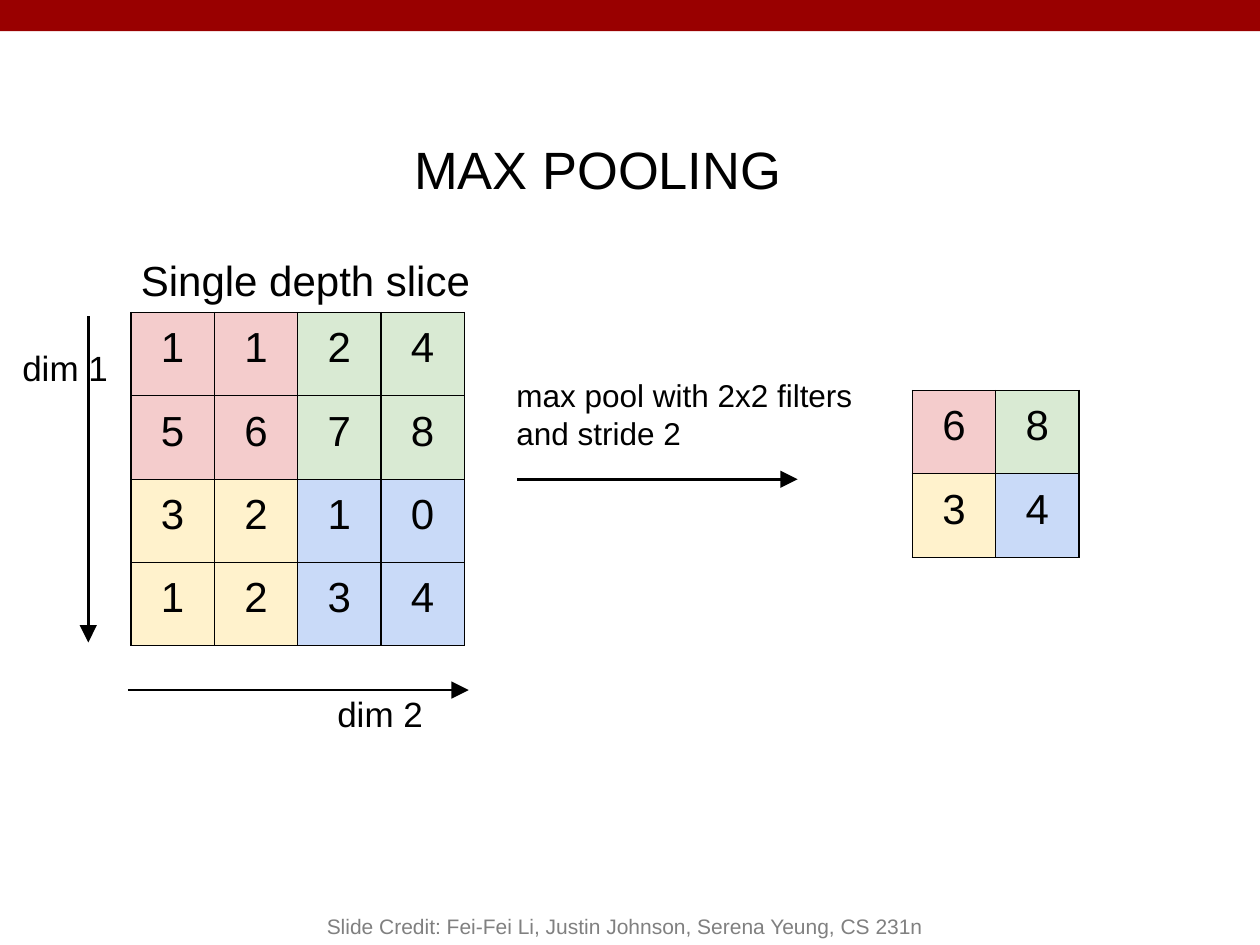
from lxml import etree
from pptx import Presentation
from pptx import util as u
from pptx.dml.color import RGBColor
from pptx.enum import shapes, text
from pptx.oxml import ns

COLOURS = {
    "banner": "990000", "ink": "000000", "credit": "808080",
    "red": "F4CCCC", "green": "D9EAD3", "yellow": "FFF2CC", "blue": "C9DAF8",
}
QUADRANTS = [["red", "green"], ["yellow", "blue"]]

# Lengths are centimetres, text sizes are points.
CELL = 1.68
GRIDS = [
    {"at": (2.64, 6.3), "values": [[1, 1, 2, 4], [5, 6, 7, 8], [3, 2, 1, 0], [1, 2, 3, 4]]},
    {"at": (18.39, 7.87), "values": [[6, 8], [3, 4]]},
]
ARROWS = [  # start, end
    ((1.78, 6.38), (1.78, 12.95)),
    ((2.58, 13.91), (9.45, 13.91)),
    ((10.43, 9.66), (16.08, 9.66)),
]
LABELS = [  # wording, (left, top, width, height), size
    ("Single depth slice", (2.59, 4.88, 7.26, 1.57), 24),
    ("dim 1", (0.2, 6.73, 2.57, 1.3), 20),
    ("dim 2", (6.55, 13.72, 2.51, 1.02), 20),
    ("max pool with 2x2 filters and stride 2", (10.16, 7.34, 7.44, 2.03), 18),
    ("MAX POOLING", (8.1, 2.51, 11.86, 1.83), 30),
]
CREDIT = ("Slide Credit: Fei-Fei Li, Justin Johnson, Serena Yeung, CS 231n",
          (5.08, 17.78, 15.04, 1.27), 12)

MARGINS = {f"margin_{side}": u.Cm(0.25) for side in ("left", "right", "top", "bottom")}
CREDIT_FRAME = {"margin_top": u.Cm(0.13), "margin_bottom": u.Cm(0.13),
                "vertical_anchor": text.MSO_ANCHOR.BOTTOM}


def colour(name):
    return RGBColor.from_string(COLOURS[name])


def apply(target, values):
    for name, value in values.items():
        setattr(target, name, value)


def write(frame, wording, size, ink="ink", align=text.PP_ALIGN.LEFT):
    para = frame.paragraphs[0]
    para.alignment = align
    span = para.add_run()
    span.text = wording
    apply(span.font, {"name": "Arial", "size": u.Pt(size)})
    span.font.color.rgb = colour(ink)


def add_label(page, wording, place, size, frame_format=None, **style):
    frame = page.shapes.add_textbox(*map(u.Cm, place)).text_frame
    apply(frame, {"word_wrap": True, **MARGINS, **(frame_format or {})})
    write(frame, wording, size, **style)


def add_borders(cell):
    """Give a cell thin borders; they must precede its fill in the XML."""
    properties = cell._tc.get_or_add_tcPr()
    for edge in ("a:lnL", "a:lnR", "a:lnT", "a:lnB"):
        line = etree.SubElement(properties, ns.qn(edge), w=str(u.Pt(0.75)))
        fill = etree.SubElement(line, ns.qn("a:solidFill"))
        etree.SubElement(fill, ns.qn("a:srgbClr"), val=COLOURS["ink"])


def add_grid(page, at, values):
    count = len(values)
    side = u.Cm(CELL * count)
    table = page.shapes.add_table(count, count, *map(u.Cm, at), side, side).table
    apply(table, {"first_row": False, "horz_banding": False})
    for i, numbers in enumerate(values):
        table.rows[i].height = table.columns[i].width = u.Cm(CELL)
        for j, number in enumerate(numbers):
            cell = table.cell(i, j)
            add_borders(cell)
            apply(cell, MARGINS)
            cell.fill.solid()
            cell.fill.fore_color.rgb = colour(QUADRANTS[2 * i // count][2 * j // count])
            write(cell.text_frame, str(number), 24, align=text.PP_ALIGN.CENTER)


def add_arrow(page, start, end):
    arrow = page.shapes.add_connector(
        shapes.MSO_CONNECTOR.STRAIGHT, *map(u.Cm, start + end))
    arrow.line.width = u.Pt(1.5)
    arrow.line.color.rgb = colour("ink")
    etree.SubElement(arrow.line._get_or_add_ln(), ns.qn("a:tailEnd"),
                     type="triangle", w="lg", len="lg")
    etree.SubElement(arrow._element.spPr, ns.qn("a:effectLst"))


def main():
    deck = Presentation()
    apply(deck, {"slide_width": u.Cm(25.4), "slide_height": u.Cm(19.05)})
    page = deck.slides.add_slide(deck.slide_layouts[6])

    banner = page.shapes.add_shape(
        shapes.MSO_SHAPE.RECTANGLE, 0, 0, deck.slide_width, u.Cm(0.63))
    banner.shadow.inherit = False
    banner.fill.solid()
    banner.fill.fore_color.rgb = colour("banner")
    banner.line.fill.background()

    for grid in GRIDS:
        add_grid(page, **grid)
    for start, end in ARROWS:
        add_arrow(page, start, end)
    for label in LABELS:
        add_label(page, *label)
    add_label(page, *CREDIT, CREDIT_FRAME, ink="credit", align=text.PP_ALIGN.CENTER)

    deck.save("out.pptx")


if __name__ == "__main__":
    main()
